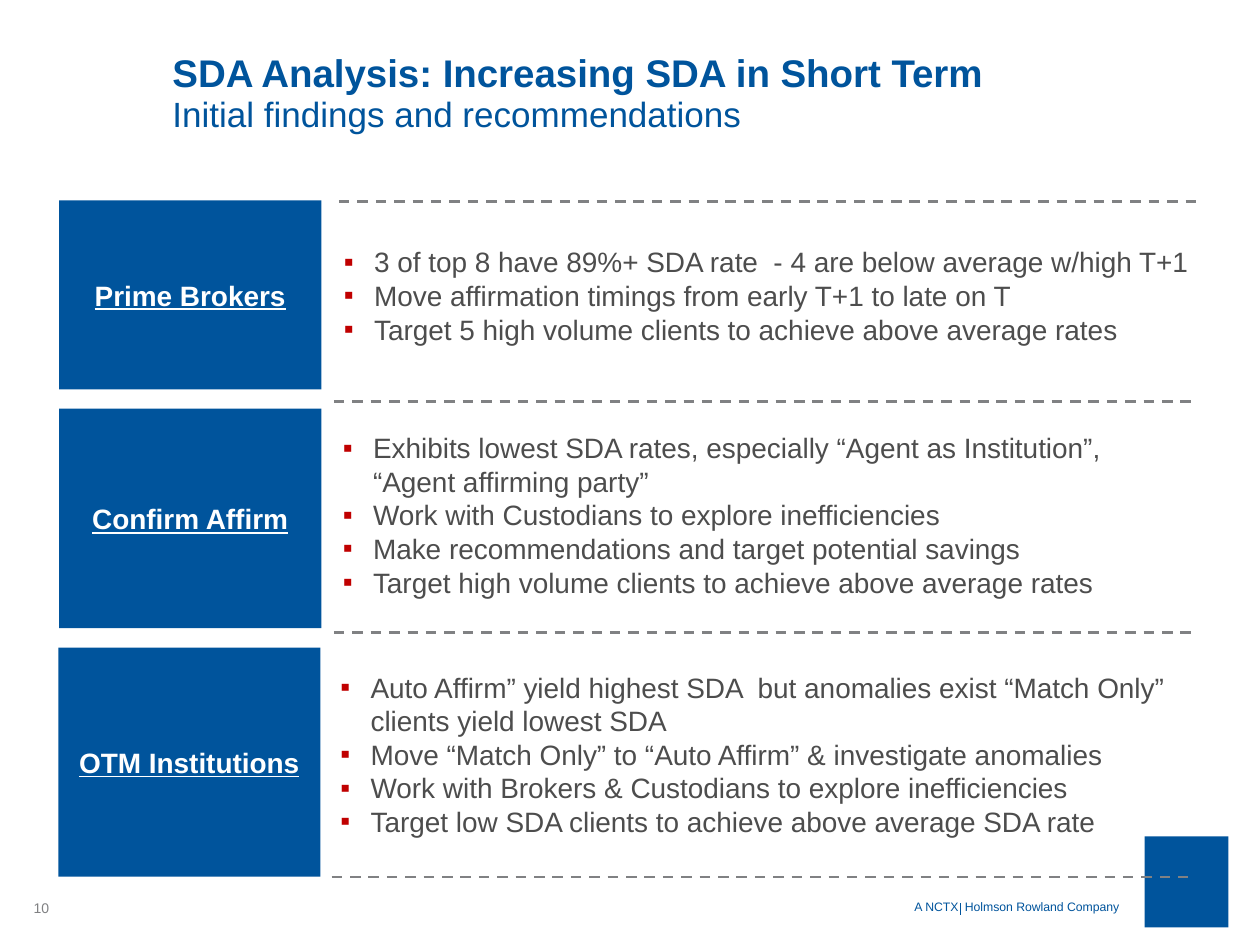
from dataclasses import dataclass

from lxml import etree
from pptx import Presentation
from pptx.dml.color import RGBColor
from pptx.enum.dml import MSO_LINE
from pptx.enum.shapes import MSO_CONNECTOR, MSO_SHAPE
from pptx.enum.text import MSO_ANCHOR, PP_ALIGN
from pptx.oxml.ns import qn
from pptx.util import Pt

RECTANGLE = MSO_SHAPE.RECTANGLE
STRAIGHT = MSO_CONNECTOR.STRAIGHT
DASH = MSO_LINE.DASH
TOP, MIDDLE = MSO_ANCHOR.TOP, MSO_ANCHOR.MIDDLE
LEFT, CENTER = PP_ALIGN.LEFT, PP_ALIGN.CENTER


@dataclass(frozen=True)
class Theme:
    font: str = "Arial"
    blue: str = "00549C"
    gray: str = "808183"
    body: str = "4D4D4D"
    bullet: str = "C00000"
    white: str = "FFFFFF"
    title_size: float = 22
    subtitle_size: float = 20
    body_size: float = 16
    page_size: float = 8
    footer_size: float = 7


@dataclass(frozen=True)
class Box:
    left: float
    top: float
    width: float
    height: float

    def lengths(self) -> tuple:
        return Pt(self.left), Pt(self.top), Pt(self.width), Pt(self.height)


@dataclass(frozen=True)
class Section:
    heading: str
    panel: Box
    findings_area: Box
    findings: tuple


@dataclass(frozen=True)
class Rule:
    left: float
    top: float


THEME = Theme()
RULE_WIDTH = 489.5
BULLET_INDENT = 17.3
FOOTER_TAB = 24.5

SECTIONS = (
    Section("Prime Brokers", Box(33.8, 114.5, 149.8, 108), Box(189.4, 126.7, 506.2, 84.2), (
        "3 of top 8 have 89%+ SDA rate  - 4 are below average w/high T+1",
        "Move affirmation timings from early T+1 to late on T",
        "Target 5 high volume clients to achieve above average rates",
    )),
    Section("Confirm Affirm", Box(33.8, 233.5, 149.8, 125.5), Box(188.8, 232.6, 491, 123.1), (
        "Exhibits lowest SDA rates, especially “Agent as Institution”, “Agent affirming party”",
        "Work with Custodians to explore inefficiencies",
        "Make recommendations and target potential savings",
        "Target high volume clients to achieve above average rates",
    )),
    Section("OTM Institutions", Box(33.3, 370, 149.8, 131), Box(187.4, 376.6, 524.9, 108.7), (
        "Auto Affirm” yield highest SDA  but anomalies exist “Match Only” clients yield lowest SDA",
        "Move “Match Only” to “Auto Affirm” & investigate anomalies",
        "Work with Brokers & Custodians to explore inefficiencies",
        "Target low SDA clients to achieve above average SDA rate",
    )),
)
RULES = (Rule(193.7, 115.2), Rule(190.8, 229.5), Rule(190.8, 361.4), Rule(189.5, 501.2))


def set_bullet(paragraph) -> None:
    properties = paragraph._p.get_or_add_pPr()
    properties.set("marL", str(Pt(BULLET_INDENT)))
    properties.set("indent", str(-Pt(BULLET_INDENT)))
    color = etree.SubElement(properties, qn("a:buClr"))
    etree.SubElement(color, qn("a:srgbClr"), val=THEME.bullet)
    etree.SubElement(properties, qn("a:buFont"), typeface=THEME.font)
    etree.SubElement(properties, qn("a:buChar"), char="▪")


def set_tab(paragraph, position: float) -> None:
    tabs = etree.SubElement(paragraph._p.get_or_add_pPr(), qn("a:tabLst"))
    etree.SubElement(tabs, qn("a:tab"), pos=str(Pt(position)), algn="l")


def write_text(frame, text: str, *, size: float, color: str, bold: bool = False,
               underline: bool = False, align=LEFT, spacing: float = 1.0,
               bullet: bool = False, tab: float = 0) -> None:
    """Fill the empty first paragraph, or add one after the existing text."""
    paragraph = frame.add_paragraph() if frame.text else frame.paragraphs[0]
    paragraph.alignment = align
    paragraph.line_spacing = spacing
    if bullet:
        set_bullet(paragraph)
    if tab:
        set_tab(paragraph, tab)
    run = paragraph.add_run()
    run.text = text
    font = run.font
    font.name, font.size = THEME.font, Pt(size)
    font.bold, font.underline = bold, underline
    font.color.rgb = RGBColor.from_string(color)


def add_text_frame(slide, box: Box, anchor=TOP, wrap: bool = True):
    frame = slide.shapes.add_textbox(*box.lengths()).text_frame
    frame.word_wrap = wrap
    frame.vertical_anchor = anchor
    return frame


def add_block(slide, box: Box):
    block = slide.shapes.add_shape(RECTANGLE, *box.lengths())
    block.shadow.inherit = False
    block.fill.solid()
    block.fill.fore_color.rgb = RGBColor.from_string(THEME.blue)
    block.line.fill.background()
    return block


def add_line(slide, start: tuple, end: tuple, color: str, width: float, dash=None) -> None:
    line = slide.shapes.add_connector(STRAIGHT, *(Pt(value) for value in start + end))
    line.line.color.rgb = RGBColor.from_string(color)
    line.line.width = Pt(width)
    if dash is not None:
        line.line.dash_style = dash
    etree.SubElement(line._element.spPr, qn("a:effectLst"))


def add_section(slide, section: Section) -> None:
    heading = add_block(slide, section.panel).text_frame
    heading.word_wrap = True
    heading.vertical_anchor = MIDDLE
    findings = add_text_frame(slide, section.findings_area, MIDDLE)
    for frame in (heading, findings):
        frame.margin_top = frame.margin_bottom = 0
    write_text(heading, section.heading, size=THEME.body_size, color=THEME.white,
               bold=True, underline=True, align=CENTER)
    for finding in section.findings:
        write_text(findings, finding, size=THEME.body_size, color=THEME.body, bullet=True)


def add_footer(slide) -> None:
    add_block(slide, Box(654, 478, 48, 52))
    owners = add_text_frame(slide, Box(515.5, 510.5, 139, 15.8))
    write_text(owners, "A NCTX\tHolmson Rowland Company", size=THEME.footer_size,
               color=THEME.blue, tab=FOOTER_TAB + 4.3)
    divider = 515.5 + 7.2 + FOOTER_TAB + 4.3
    add_line(slide, (divider - 2.9, 516.2), (divider - 2.9, 522.7), THEME.blue, 0.5)
    page = add_text_frame(slide, Box(12.2, 510.5, 24.5, 16.6), wrap=False)
    write_text(page, "10", size=THEME.page_size, color=THEME.gray)


def main() -> None:
    presentation = Presentation()
    presentation.slide_width, presentation.slide_height = Pt(720), Pt(540)
    slide = presentation.slides.add_slide(presentation.slide_layouts[6])

    # Footer
    add_footer(slide)

    # Title
    title = add_text_frame(slide, Box(91.5, 20.2, 559.5, 67), MIDDLE)
    write_text(title, "SDA Analysis: Increasing SDA in Short Term",
               size=THEME.title_size, color=THEME.blue, bold=True, spacing=0.95)
    write_text(title, "Initial findings and recommendations",
               size=THEME.subtitle_size, color=THEME.blue, spacing=0.95)

    # Findings by section, with dashed rules between
    for section in SECTIONS:
        add_section(slide, section)
    for rule in RULES:
        add_line(slide, (rule.left, rule.top), (rule.left + RULE_WIDTH, rule.top),
                 THEME.gray, 1.5, DASH)

    presentation.save("out.pptx")


if __name__ == "__main__":
    main()
